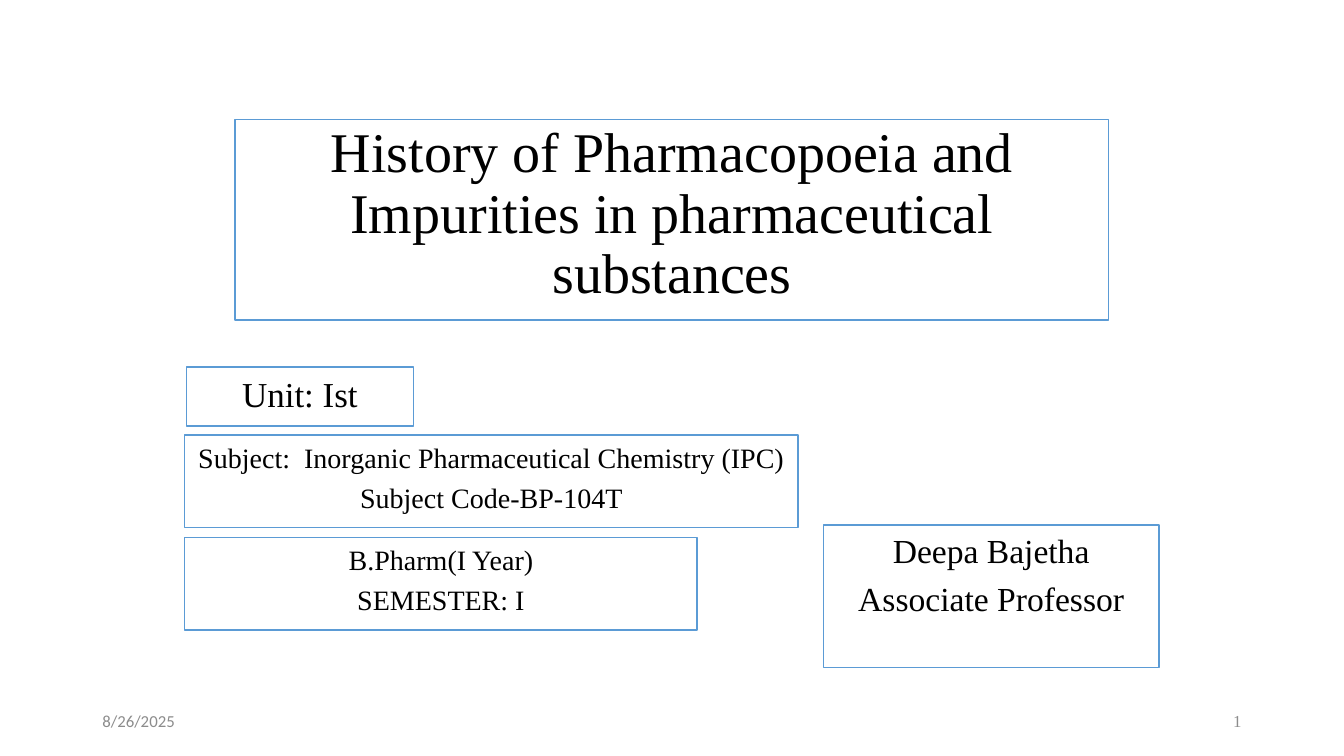
from pptx import Presentation
from pptx import util as u
from pptx.dml.color import RGBColor
from pptx.enum import shapes, text

WHITE = RGBColor(0xFF, 0xFF, 0xFF)
BLACK = RGBColor(0x00, 0x00, 0x00)
BLUE = RGBColor(0x5B, 0x9B, 0xD5)
GREY = RGBColor(0x8C, 0x8C, 0x8C)
SERIF, SANS = "Times New Roman", "Calibri"
COLUMNS, ROWS = 160, 90
LEFT, CENTER, RIGHT = text.PP_ALIGN.LEFT, text.PP_ALIGN.CENTER, text.PP_ALIGN.RIGHT
TOP, MIDDLE = text.MSO_ANCHOR.TOP, text.MSO_ANCHOR.MIDDLE


class TitleSlide:
    """Places elements by (column, row, columns wide, rows high)."""

    def __init__(self, presentation):
        self.cell_width = presentation.slide_width / COLUMNS
        self.cell_height = presentation.slide_height / ROWS
        self.slide = presentation.slides.add_slide(presentation.slide_layouts[5])

    def place(self, column, row, width, height):
        return (round(column * self.cell_width), round(row * self.cell_height),
                round(width * self.cell_width), round(height * self.cell_height))

    def outline(self, shape):
        shape.fill.solid()
        shape.fill.fore_color.rgb = WHITE
        shape.line.color.rgb = BLUE
        shape.line.width = u.Pt(1)

    def add_lines(self, shape, lines, size, font=SERIF, color=BLACK, align=CENTER,
                  anchor=TOP, before=0, spacing=1.0):
        frame = shape.text_frame
        frame.word_wrap = True
        frame.auto_size = text.MSO_AUTO_SIZE.NONE
        frame.vertical_anchor = anchor
        for index, line in enumerate(lines):
            paragraph = frame.add_paragraph() if index else frame.paragraphs[0]
            paragraph.alignment = align
            paragraph.space_before = u.Pt(before)
            paragraph.line_spacing = spacing
            run = paragraph.add_run()
            run.text = line
            run.font.name = font
            run.font.size = u.Pt(size)
            run.font.color.rgb = color

    def title(self, cells, line, size):
        shape = self.slide.shapes.title
        shape.left, shape.top, shape.width, shape.height = self.place(*cells)
        self.outline(shape)
        self.add_lines(shape, [line], size, before=10, spacing=0.9)

    def box(self, cells, lines, size):
        shape = self.slide.shapes.add_shape(
            shapes.MSO_SHAPE.RECTANGLE, *self.place(*cells))
        shape.shadow.inherit = False
        self.outline(shape)
        self.add_lines(shape, lines, size, before=round(size * 0.24, 1))

    def footer(self, column, line, font, align):
        shape = self.slide.shapes.add_textbox(*self.place(column, 83.4, 36, 4.8))
        self.add_lines(shape, [line], 12, font, GREY, align, MIDDLE)


def main():
    presentation = Presentation()
    presentation.slide_width = u.Inches(13.33)
    presentation.slide_height = u.Inches(7.5)
    cover = TitleSlide(presentation)

    cover.title((28, 14.2, 104, 23.9),
                "History of Pharmacopoeia and Impurities in pharmaceutical substances", 40)
    cover.box((98, 62.5, 40, 17), ["Deepa Bajetha", "Associate Professor"], 24)
    cover.box((22.2, 43.7, 27, 7), ["Unit: Ist"], 25)
    cover.box((22, 51.8, 73, 11),
              ["Subject:  Inorganic Pharmaceutical Chemistry (IPC)",
               "Subject Code-BP-104T"], 20)
    cover.box((22, 64, 61, 11), ["B.Pharm(I Year)", "SEMESTER: I"], 20)
    cover.footer(11, "8/26/2025", SANS, LEFT)
    cover.footer(113, "1", SERIF, RIGHT)

    presentation.save("out.pptx")


if __name__ == "__main__":
    main()
